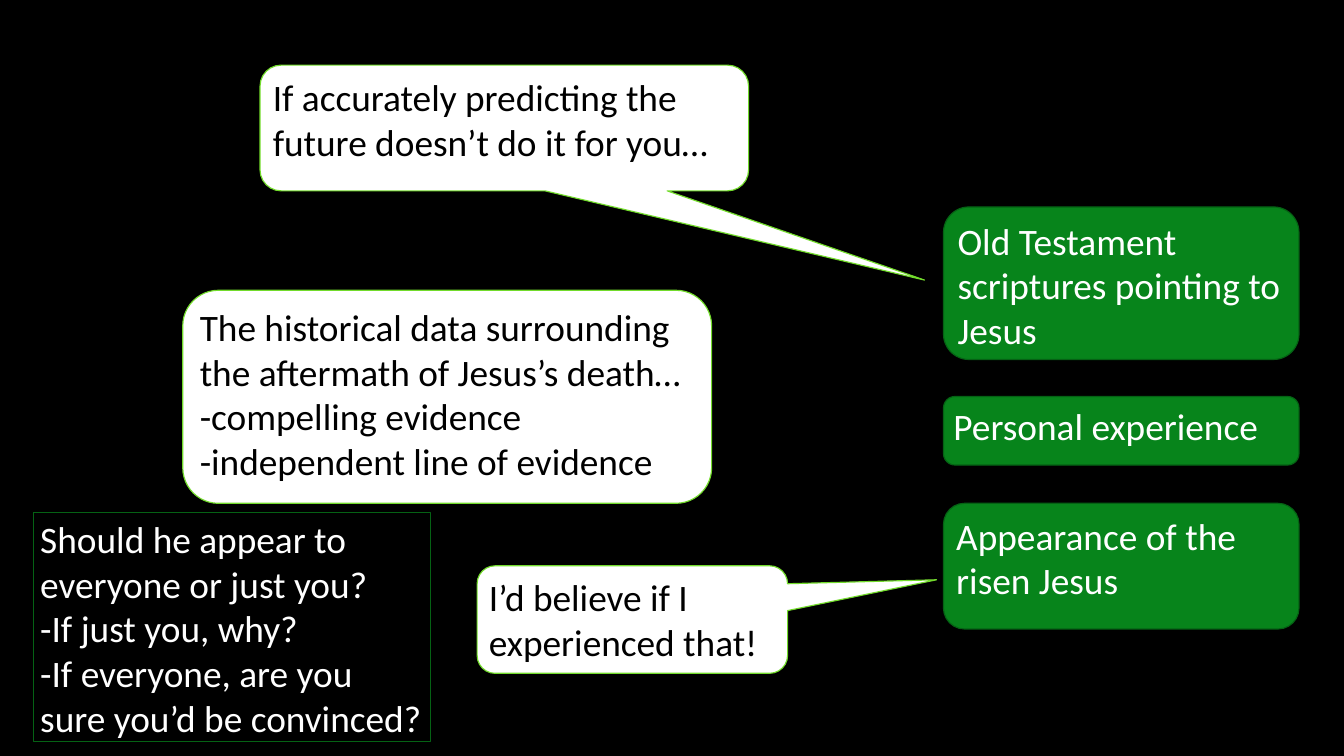
"""Build a slide of speech bubbles answering three green evidence boxes."""
from dataclasses import dataclass

from pptx import Presentation
from pptx.dml.color import RGBColor
from pptx.enum.shapes import MSO_SHAPE
from pptx.enum.text import MSO_ANCHOR, PP_ALIGN
from pptx.util import Inches, Pt

ROUND = MSO_SHAPE.ROUNDED_RECTANGLE
CALL = MSO_SHAPE.ROUNDED_RECTANGULAR_CALLOUT
RECT = MSO_SHAPE.RECTANGLE
TOP = MSO_ANCHOR.TOP
LEFT = PP_ALIGN.LEFT

BLACK, WHITE = "000000", "FFFFFF"
GREEN, DARK, LIME = "07841B", "056214", "72DB2B"


@dataclass(frozen=True)
class Look:
    """Colours of a box."""
    fill: str
    line: str
    ink: str


@dataclass(frozen=True)
class Box:
    """A box with its place in inches and its lines of text."""
    kind: int
    look: Look
    at: tuple[float, float, float, float]
    lines: tuple[str, ...]
    tail: tuple[float, ...] = ()


CLAIM = Look(GREEN, DARK, WHITE)
REPLY = Look(WHITE, LIME, BLACK)
ASIDE = Look(BLACK, DARK, WHITE)

CLAIMS = [
    Box(ROUND, CLAIM, (14.04, top, 5.29, high), (text,))
    for top, high, text in (
        (3.08, 2.27, "Old Testament scriptures pointing to Jesus"),
        (5.9, 1.02, "Personal experience"),
        (7.49, 1.87, "Appearance of the risen Jesus"),
    )
]
REPLIES = [
    Box(CALL, REPLY, (7.1, 8.42, 4.62, 1.6),
        ("I’d believe if I experienced that!",), (0.98, -0.37)),
    Box(CALL, REPLY, (3.87, 0.97, 7.27, 1.87),
        ("If accurately predicting the future doesn’t do it for you…",),
        (0.86, 1.21)),
    Box(ROUND, REPLY, (2.72, 4.32, 7.87, 3.17),
        ("The historical data surrounding the aftermath of Jesus’s death…",
         "-compelling evidence",
         "-independent line of evidence")),
    Box(RECT, ASIDE, (0.5, 7.63, 5.91, 3.41),
        ("Should he appear to everyone or just you?",
         "-If just you, why?",
         "-If everyone, are you sure you’d be convinced?")),
]


def tint(code: str) -> RGBColor:
    """Turn a hex string into a colour."""
    return RGBColor.from_string(code)


def write(frame, lines: tuple[str, ...], *, ink: str, size: float = 40,
          font: str = "Calibri") -> None:
    """Fill a text frame with one paragraph per line."""
    frame.word_wrap = True
    frame.vertical_anchor = TOP
    frame.text = "\n".join(lines)
    for para in frame.paragraphs:
        para.alignment = LEFT
        para.font.size = Pt(size)
        para.font.name = font
        para.font.color.rgb = tint(ink)


def draw(slide, box: Box) -> None:
    """Draw a box and its text."""
    shape = slide.shapes.add_shape(box.kind, *map(Inches, box.at))
    shape.shadow.inherit = False
    shape.fill.solid()
    shape.fill.fore_color.rgb = tint(box.look.fill)
    shape.line.color.rgb = tint(box.look.line)
    shape.line.width = Pt(1.25)
    for spot, value in enumerate(box.tail):
        shape.adjustments[spot] = value
    write(shape.text_frame, box.lines, ink=box.look.ink)


def main() -> None:
    """Build and save the slide."""
    deck = Presentation()
    deck.slide_width, deck.slide_height = Inches(20), Inches(11.25)
    slide = deck.slides.add_slide(deck.slide_layouts[6])
    slide.background.fill.solid()
    slide.background.fill.fore_color.rgb = tint(BLACK)
    for box in CLAIMS + REPLIES:
        draw(slide, box)
    deck.save("out.pptx")


if __name__ == "__main__":
    main()
